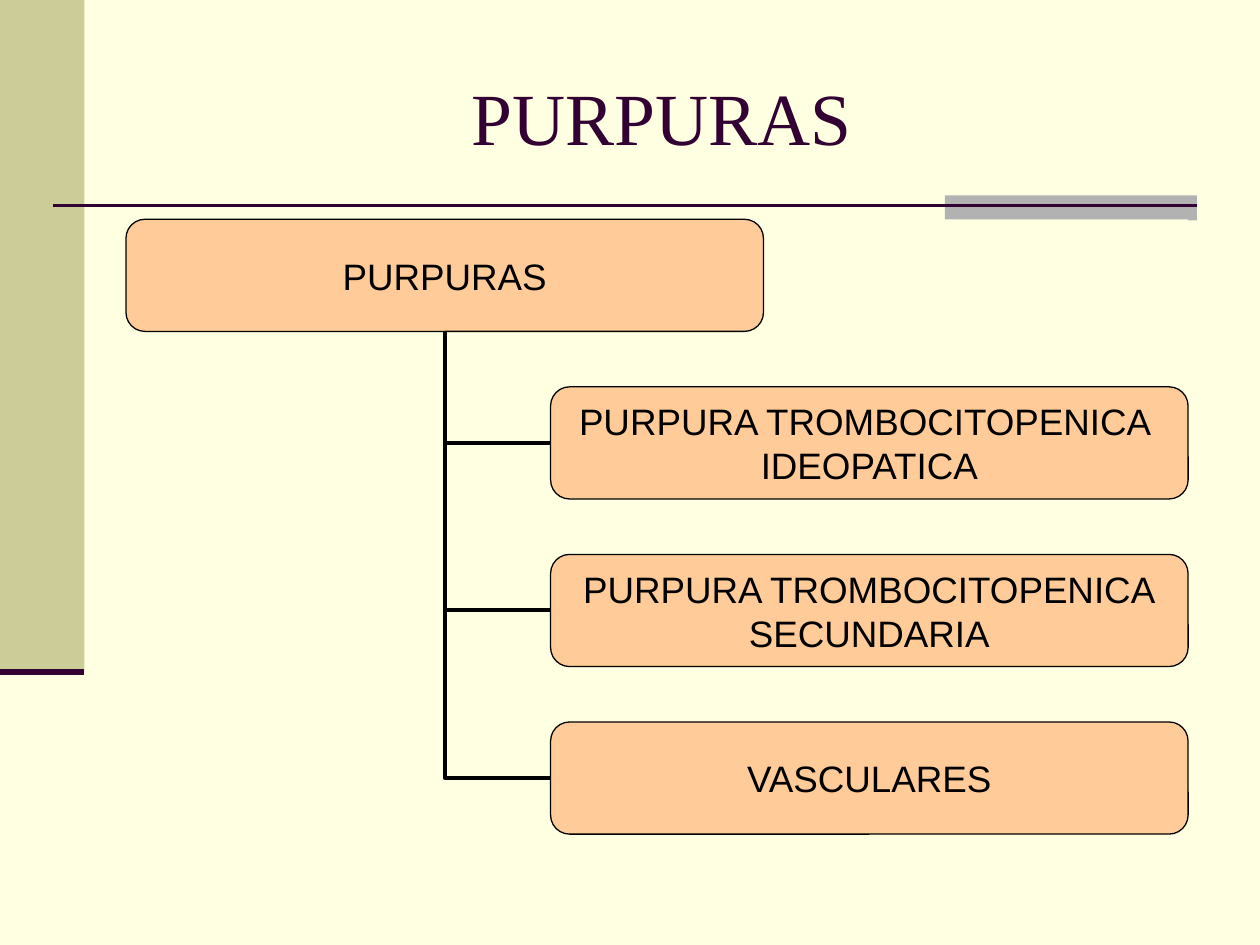
from dataclasses import dataclass

from lxml.etree import SubElement
from pptx import Presentation
from pptx.dml.color import RGBColor
from pptx.enum.shapes import MSO_CONNECTOR, MSO_SHAPE
from pptx.enum.text import MSO_ANCHOR, PP_ALIGN
from pptx.oxml.ns import qn
from pptx.util import Inches, Pt


@dataclass(frozen=True)
class Theme:
    paper: str = "FFFFE1"
    band: str = "CCCC99"
    tab: str = "B2B2B2"
    plum: str = "330033"
    peach: str = "FFCC99"
    ink: str = "000000"
    serif: str = "Times New Roman"
    sans: str = "Arial"
    title: int = 42
    body: int = 21


def color(code):
    return RGBColor.from_string(code)


def write(frame, text, *, font, size, ink, inset=None, wrap=True):
    """Fill a frame with centred text, one paragraph a line."""
    frame.word_wrap = wrap
    frame.vertical_anchor = MSO_ANCHOR.MIDDLE
    if inset is not None:
        frame.margin_left = frame.margin_right = Inches(inset)
        frame.margin_top = frame.margin_bottom = Inches(inset)
    frame.text = text
    for para in frame.paragraphs:
        para.alignment = PP_ALIGN.CENTER
        for run in para.runs:
            run.font.name = font
            run.font.size = Pt(size)
            run.font.color.rgb = color(ink)


class Deck:
    def __init__(self, theme):
        self.theme = theme
        self.file = Presentation()
        self.file.slide_width = Inches(10)
        self.file.slide_height = Inches(7.5)
        self.slide = self.file.slides.add_slide(self.file.slide_layouts[6])
        back = self.slide.background.fill
        back.solid()
        back.fore_color.rgb = color(theme.paper)

    def shape(self, kind, x, y, w, h, fill):
        item = self.slide.shapes.add_shape(
            kind, Inches(x), Inches(y), Inches(w), Inches(h))
        item.shadow.inherit = False
        item.fill.solid()
        item.fill.fore_color.rgb = color(fill)
        item.line.fill.background()
        return item

    def block(self, x, y, w, h, fill):
        return self.shape(MSO_SHAPE.RECTANGLE, x, y, w, h, fill)

    def title(self, text, x, y, w, h):
        item = self.slide.shapes.add_textbox(
            Inches(x), Inches(y), Inches(w), Inches(h))
        write(item.text_frame, text, font=self.theme.serif,
              size=self.theme.title, ink=self.theme.plum)

    def node(self, text, x, y, w, h):
        item = self.shape(MSO_SHAPE.ROUNDED_RECTANGLE, x, y, w, h,
                          self.theme.peach)
        item.adjustments[0] = 0.17
        item.line.color.rgb = color(self.theme.ink)
        item.line.width = Pt(0.75)
        write(item.text_frame, text, font=self.theme.sans,
              size=self.theme.body, ink=self.theme.ink, inset=0, wrap=False)
        return item

    def line(self, x1, y1, x2, y2, ink, width, kind=MSO_CONNECTOR.STRAIGHT):
        item = self.slide.shapes.add_connector(
            kind, Inches(x1), Inches(y1), Inches(x2), Inches(y2))
        item.line.color.rgb = color(ink)
        item.line.width = Pt(width)
        SubElement(item.element.spPr, qn("a:effectLst"))
        return item

    def branch(self, child, root):
        """Join a child's left side to the root's bottom with one bend."""
        item = self.line(0, 0, 1, 1, self.theme.ink, 2.25,
                         MSO_CONNECTOR.ELBOW)
        item.element.spPr.find(qn("a:prstGeom")).set("prst", "bentConnector2")
        item.begin_connect(child, 1)
        item.end_connect(root, 2)


def main():
    theme = Theme()
    deck = Deck(theme)

    deck.block(0, 0, 0.67, 5.33, theme.band)
    deck.block(7.5, 1.55, 2, 0.2, theme.tab)
    deck.line(0.42, 1.63, 9.5, 1.63, theme.plum, 1.5)
    deck.line(0, 5.33, 0.67, 5.33, theme.plum, 3.5)
    deck.title("PURPURAS", 1, 0.3, 8.5, 1.25)

    left, top, wide, high, step = 1, 1.74, 5.06, 0.89, 1.33
    deck.block(left, top, 8.43, 4.88, theme.paper)
    root = deck.node("PURPURAS", left, top, wide, high)
    types = [
        "PURPURA TROMBOCITOPENICA \nIDEOPATICA",
        "PURPURA TROMBOCITOPENICA\nSECUNDARIA",
        "VASCULARES",
    ]
    for row, text in enumerate(types, 1):
        child = deck.node(text, 4.37, top + row * step, wide, high)
        deck.branch(child, root)

    deck.file.save("out.pptx")


if __name__ == "__main__":
    main()
